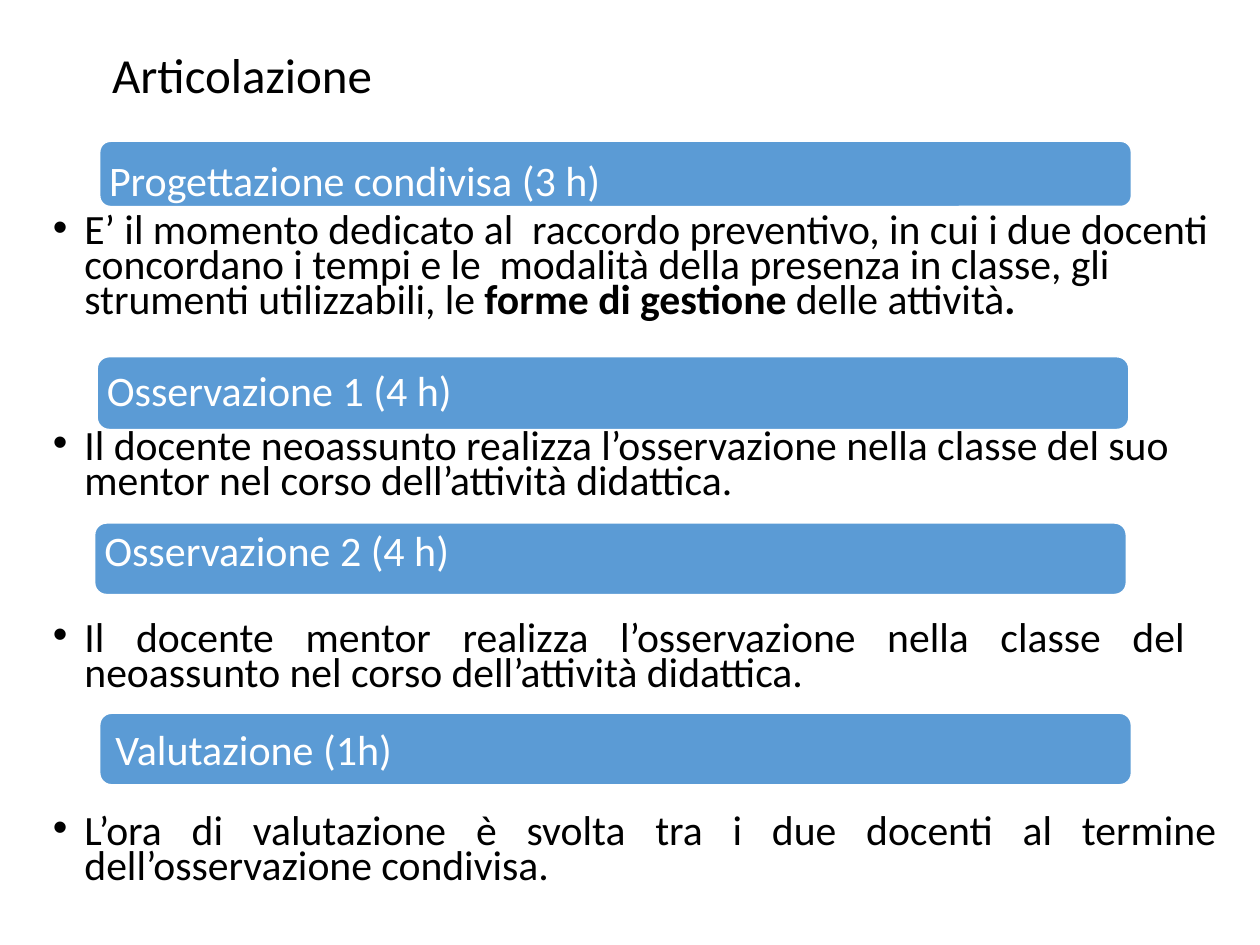
"""Build the slide on the four phases of the mentoring activity."""
from lxml.etree import SubElement
from pptx import Presentation
from pptx.dml.color import RGBColor
from pptx.enum.shapes import MSO_SHAPE
from pptx.enum.text import MSO_ANCHOR, MSO_AUTO_SIZE, PP_ALIGN
from pptx.oxml.ns import qn
from pptx.util import Inches, Pt

THEME = {
    "font": "Calibri",
    "text": RGBColor(0, 0, 0),
    "bar": RGBColor(0x5B, 0x9B, 0xD5),
    "light": RGBColor(255, 255, 255),
    "title_size": Pt(28),
    "bar_size": Pt(24),
    "body_size": Pt(23.8),
}

TITLE = "Articolazione"

PHASES = [
    {"label": "Progettazione condivisa (3 h)", "box": (0.79, 1.12, 8.19, 0.52),
     "insets": (0.05, 0.14, 0), "spacing": 0.9},
    {"label": "Osservazione 1 (4 h)", "box": (0.77, 2.83, 8.19, 0.58),
     "insets": (0.05, 0, 0), "spacing": 0.9},
    {"label": "Osservazione 2 (4 h)", "box": (0.75, 4.15, 8.19, 0.57),
     "insets": (0.05, 0, 0.09), "spacing": 0.9},
    {"label": "Valutazione (1h)", "box": (0.79, 5.66, 8.19, 0.57),
     "insets": (0.1, 0.05, 0.05), "spacing": 1.0},
]

DESCRIPTIONS = [
    {"runs": [("E’ il momento dedicato al  raccordo preventivo, in cui i due docenti "
               "concordano i tempi e le  modalità della presenza in classe, gli "
               "strumenti utilizzabili, le ", False),
              ("forme di gestione ", True), ("delle attività", False), (".", True)],
     "before": 0, "align": PP_ALIGN.LEFT},
    {"runs": [("Il docente neoassunto realizza l’osservazione nella classe del suo "
               "mentor nel corso dell’attività didattica.", False)],
     "before": 63, "align": PP_ALIGN.LEFT},
    {"runs": [("Il docente mentor realizza l’osservazione nella classe del  "
               "neoassunto nel corso dell’attività didattica.", False)],
     "before": 70, "align": PP_ALIGN.JUSTIFY},
    {"runs": [("L’ora di valutazione è svolta tra i due docenti al termine "
               "dell’osservazione condivisa.", False)],
     "before": 70, "align": PP_ALIGN.JUSTIFY},
]


def apply_format(target, **values):
    for name, value in values.items():
        setattr(target, name, value)


def place(shape, left, top, width, height):
    apply_format(shape, left=Inches(left), top=Inches(top),
                 width=Inches(width), height=Inches(height))


def set_font(font, size, color, bold=False):
    apply_format(font, name=THEME["font"], size=THEME[size], bold=bold)
    font.color.rgb = THEME[color]


def fill_title(title):
    place(title, 0.79, 0.3, 2.38, 0.57)
    apply_format(title.text_frame, text=TITLE, word_wrap=False,
                 auto_size=MSO_AUTO_SIZE.NONE, vertical_anchor=MSO_ANCHOR.TOP)
    paragraph = title.text_frame.paragraphs[0]
    paragraph.alignment = PP_ALIGN.LEFT
    set_font(paragraph.runs[0].font, "title_size", "text")


def add_bullet(paragraph):
    properties = paragraph._p.get_or_add_pPr()
    properties.set("marL", str(Inches(0.25)))
    properties.set("indent", str(-Inches(0.25)))
    SubElement(properties, qn("a:buFont"), typeface="Arial")
    SubElement(properties, qn("a:buChar"), char="•")


def fill_body(body):
    place(body, 0.32, 1.67, 9.43, 5.53)
    frame = body.text_frame
    apply_format(frame, word_wrap=True, auto_size=MSO_AUTO_SIZE.NONE,
                 vertical_anchor=MSO_ANCHOR.TOP)
    for index, description in enumerate(DESCRIPTIONS):
        paragraph = frame.add_paragraph() if index else frame.paragraphs[0]
        add_bullet(paragraph)
        apply_format(paragraph, alignment=description["align"], line_spacing=0.7,
                     space_before=Pt(description["before"]))
        for text, bold in description["runs"]:
            run = paragraph.add_run()
            run.text = text
            set_font(run.font, "body_size", "text", bold)


def add_phase_bar(slide, phase):
    bar = slide.shapes.add_shape(MSO_SHAPE.ROUNDED_RECTANGLE, *map(Inches, phase["box"]))
    bar.shadow.inherit = False
    bar.fill.solid()
    bar.fill.fore_color.rgb = THEME["bar"]
    bar.line.color.rgb = THEME["light"]
    bar.line.width = Pt(1)
    left, top, bottom = map(Inches, phase["insets"])
    apply_format(bar.text_frame, text=phase["label"], word_wrap=True,
                 vertical_anchor=MSO_ANCHOR.MIDDLE,
                 margin_left=left, margin_top=top, margin_bottom=bottom)
    paragraph = bar.text_frame.paragraphs[0]
    apply_format(paragraph, alignment=PP_ALIGN.LEFT, line_spacing=phase["spacing"])
    set_font(paragraph.runs[0].font, "bar_size", "light")


def main():
    presentation = Presentation()
    apply_format(presentation, slide_width=Inches(10), slide_height=Inches(7.5))
    slide = presentation.slides.add_slide(presentation.slide_layouts[1])
    fill_title(slide.shapes.title)
    fill_body(slide.placeholders[1])
    for phase in PHASES:
        add_phase_bar(slide, phase)
    presentation.save("out.pptx")


if __name__ == "__main__":
    main()
